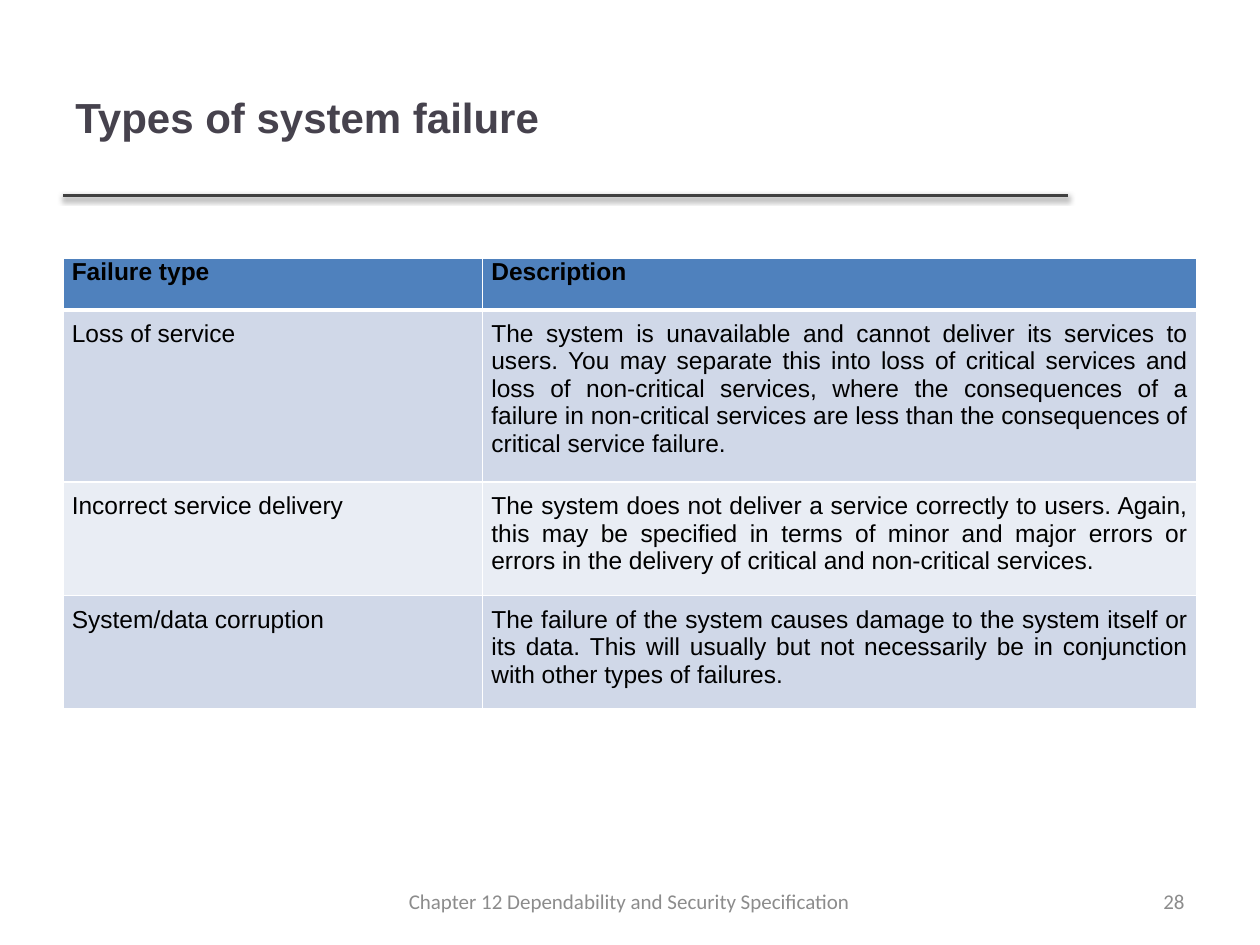
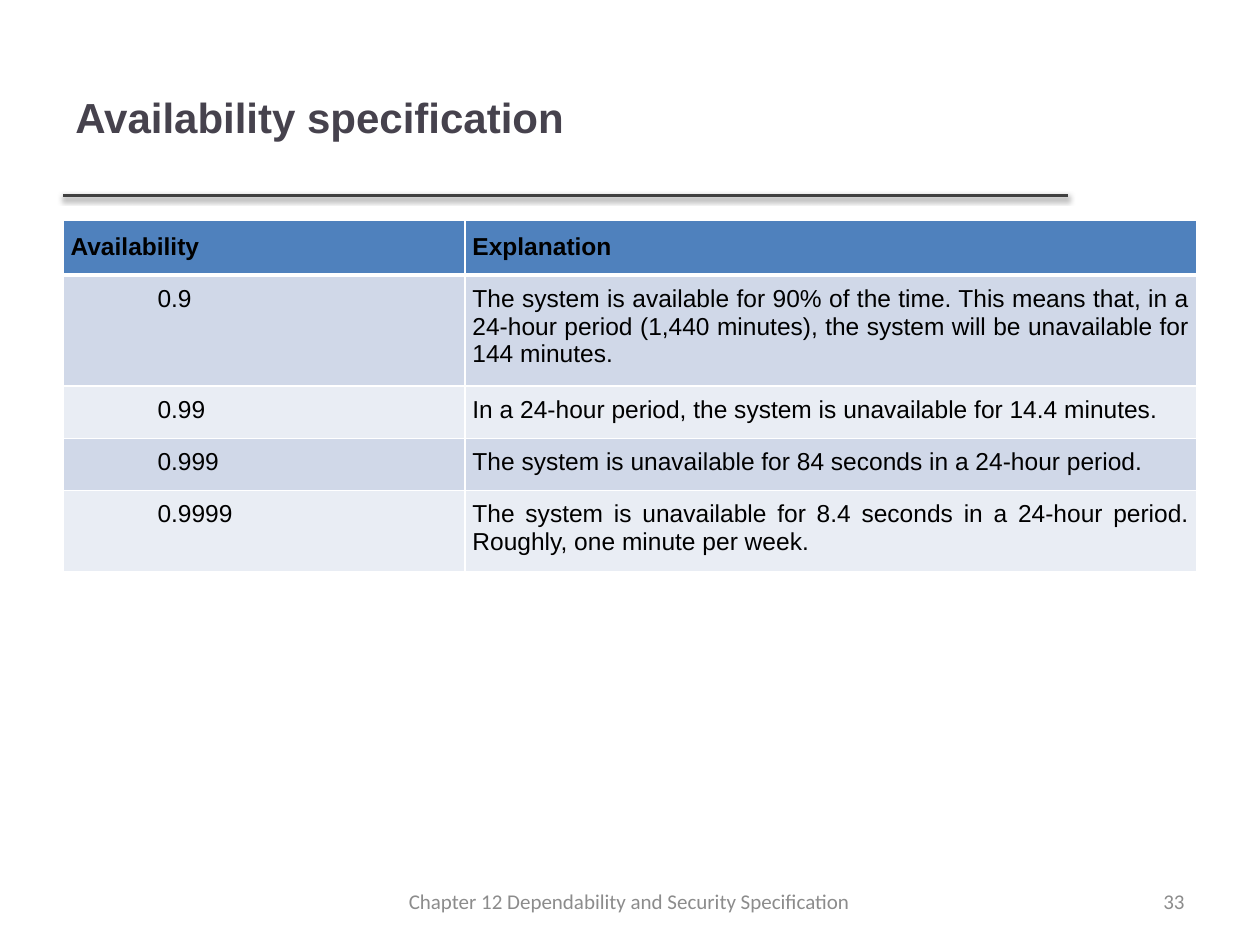
from lxml.etree import SubElement
from pptx import Presentation
from pptx.dml.color import RGBColor
from pptx.enum.shapes import MSO_CONNECTOR
from pptx.enum.text import MSO_ANCHOR, PP_ALIGN
from pptx.oxml import parse_xml
from pptx.oxml.ns import nsdecls, qn
from pptx.util import Inches, Pt

TITLE_INK = RGBColor(0x46, 0x42, 0x4D)
RULE_INK = RGBColor(0x40, 0x40, 0x40)
FOOTER_INK = RGBColor(0x8C, 0x8C, 0x8C)
TABLE_INK = RGBColor(0, 0, 0)
WHITE = RGBColor(0xFF, 0xFF, 0xFF)
HEADER_FILL = RGBColor(0x4F, 0x81, 0xBD)
BAND_FILLS = [RGBColor(0xE9, 0xED, 0xF4), RGBColor(0xD0, 0xD8, 0xE8)]

TITLE_FONT = {"name": "Arial", "size": Pt(24), "bold": True}
FOOTER_FONT = {"name": "Calibri", "size": Pt(12), "bold": False}
TABLE_FONT = {"name": "Arial", "size": Pt(14)}
MARGINS = ("margin_left", "margin_top", "margin_right", "margin_bottom")

TITLE_BOX = (0.5, 0.3, 7.98, 1.25)
FOOTER_BOX = (2.83, 6.95, 4.33, 0.4)
NUMBER_BOX = (7.17, 6.95, 2.33, 0.4)
ROW_HEIGHT = 0.41
FOOTER_TEXT = "Chapter 12 Dependability and Security Specification"

SHADOW = (
    f'<a:effectLst {nsdecls("a")}>'
    f'<a:outerShdw blurRad="{Pt(3.1)}" dist="{Pt(1.6)}" dir="5400000" rotWithShape="0">'
    '<a:srgbClr val="000000"><a:alpha val="38000"/></a:srgbClr>'
    "</a:outerShdw></a:effectLst>"
)

SLIDES = [
    {
        "title": "Types of system failure",
        "number": 28,
        "box": (0.5, 2.05, 9, 3.56),
        "columns": (3.33, 5.67),
        "header_insets": (0.07, 0, 0.07, 0),
        "body_insets": (0.07, 0.08, 0.07, 0.12),
        "label_indent": 0,
        "rows": [
            ("Failure type", "Description"),
            ("Loss of service",
             "The system is unavailable and cannot deliver its services to users. You may "
             "separate this into loss of critical services and loss of non-critical services, "
             "where the consequences of a failure in non-critical services are less than the "
             "consequences of critical service failure."),
            ("Incorrect service delivery",
             "The system does not deliver a service correctly to users. Again, this may be "
             "specified in terms of minor and major errors or errors in the delivery of "
             "critical and non-critical services."),
            ("System/data corruption",
             "The failure of the system causes damage to the system itself or its data. This "
             "will usually but not necessarily be in conjunction with other types of failures."),
        ],
    },
    {
        "title": "Availability specification",
        "number": 33,
        "box": (0.5, 1.75, 9, 2.78),
        "columns": (3.19, 5.81),
        "header_insets": (0.06, 0.1, 0.06, 0.1),
        "body_insets": (0.06, 0.08, 0.06, 0.1),
        "label_indent": 0.69,
        "rows": [
            ("Availability", "Explanation"),
            ("0.9",
             "The system is available for 90% of the time. This means that, in a 24-hour "
             "period (1,440 minutes), the system will be unavailable for 144 minutes."),
            ("0.99", "In a 24-hour period, the system is unavailable for 14.4 minutes."),
            ("0.999", "The system is unavailable for 84 seconds in a 24-hour period."),
            ("0.9999",
             "The system is unavailable for 8.4 seconds in a 24-hour period. Roughly, one "
             "minute per week."),
        ],
    },
]


def apply(target, values):
    for key, value in values.items():
        setattr(target, key, value)


def write(paragraph, text, font, ink, alignment):
    paragraph.text = text
    paragraph.alignment = alignment
    apply(paragraph.font, font)
    paragraph.font.color.rgb = ink


def add_label(slide, box, text, font, ink, alignment):
    frame = slide.shapes.add_textbox(*map(Inches, box)).text_frame
    apply(frame, {"word_wrap": True, "vertical_anchor": MSO_ANCHOR.MIDDLE})
    write(frame.paragraphs[0], text, font, ink, alignment)


def add_heading(slide, box, title):
    left, top, width, height = box
    base = Inches(top + height)
    rule = slide.shapes.add_connector(
        MSO_CONNECTOR.STRAIGHT, Inches(left), base, Inches(left + width), base)
    rule.line.width = Pt(2)
    rule.line.color.rgb = RULE_INK
    rule.element.spPr.append(parse_xml(SHADOW))
    add_label(slide, box, title, TITLE_FONT, TITLE_INK, PP_ALIGN.LEFT)


def add_footer(slide, number):
    add_label(slide, NUMBER_BOX, str(number), FOOTER_FONT, FOOTER_INK, PP_ALIGN.RIGHT)
    add_label(slide, FOOTER_BOX, FOOTER_TEXT, FOOTER_FONT, FOOTER_INK, PP_ALIGN.CENTER)


def set_borders(cell, row):
    widths = {"L": 1, "R": 1, "T": 3 if row == 1 else 1, "B": 3 if row == 0 else 1}
    properties = cell._tc.get_or_add_tcPr()
    for side, width in widths.items():
        border = SubElement(properties, qn(f"a:ln{side}"), w=str(Pt(width)))
        fill = SubElement(border, qn("a:solidFill"))
        SubElement(fill, qn("a:srgbClr"), val=str(WHITE))


def fill_cell(cell, row, column, text, content):
    is_header = row == 0
    insets = content["header_insets" if is_header else "body_insets"]
    apply(cell, dict(zip(MARGINS, map(Inches, insets))))
    set_borders(cell, row)
    cell.fill.solid()
    cell.fill.fore_color.rgb = HEADER_FILL if is_header else BAND_FILLS[row % 2]
    paragraph = cell.text_frame.paragraphs[0]
    is_indented = column == 0 and content["label_indent"]
    alignment = PP_ALIGN.LEFT if is_indented else PP_ALIGN.JUSTIFY
    write(paragraph, text, {**TABLE_FONT, "bold": is_header}, TABLE_INK, alignment)
    if is_indented and not is_header:
        paragraph._p.get_or_add_pPr().set("indent", str(Inches(content["label_indent"])))


def add_definitions(slide, content):
    rows, box = content["rows"], content["box"]
    frame = slide.shapes.add_table(len(rows), len(content["columns"]), *map(Inches, box))
    table = frame.table
    for column, width in zip(table.columns, content["columns"]):
        column.width = Inches(width)
    for r, texts in enumerate(rows):
        table.rows[r].height = Inches(ROW_HEIGHT)
        for c, text in enumerate(texts):
            fill_cell(table.cell(r, c), r, c, text, content)
    frame.height = Inches(box[3])


def add_table_slide(deck, content):
    slide = deck.slides.add_slide(deck.slide_layouts[6])
    add_heading(slide, TITLE_BOX, content["title"])
    add_definitions(slide, content)
    add_footer(slide, content["number"])


def main():
    deck = Presentation()
    apply(deck, {"slide_width": Inches(10), "slide_height": Inches(7.5)})
    for content in SLIDES:
        add_table_slide(deck, content)
    deck.save("out.pptx")


if __name__ == "__main__":
    main()
